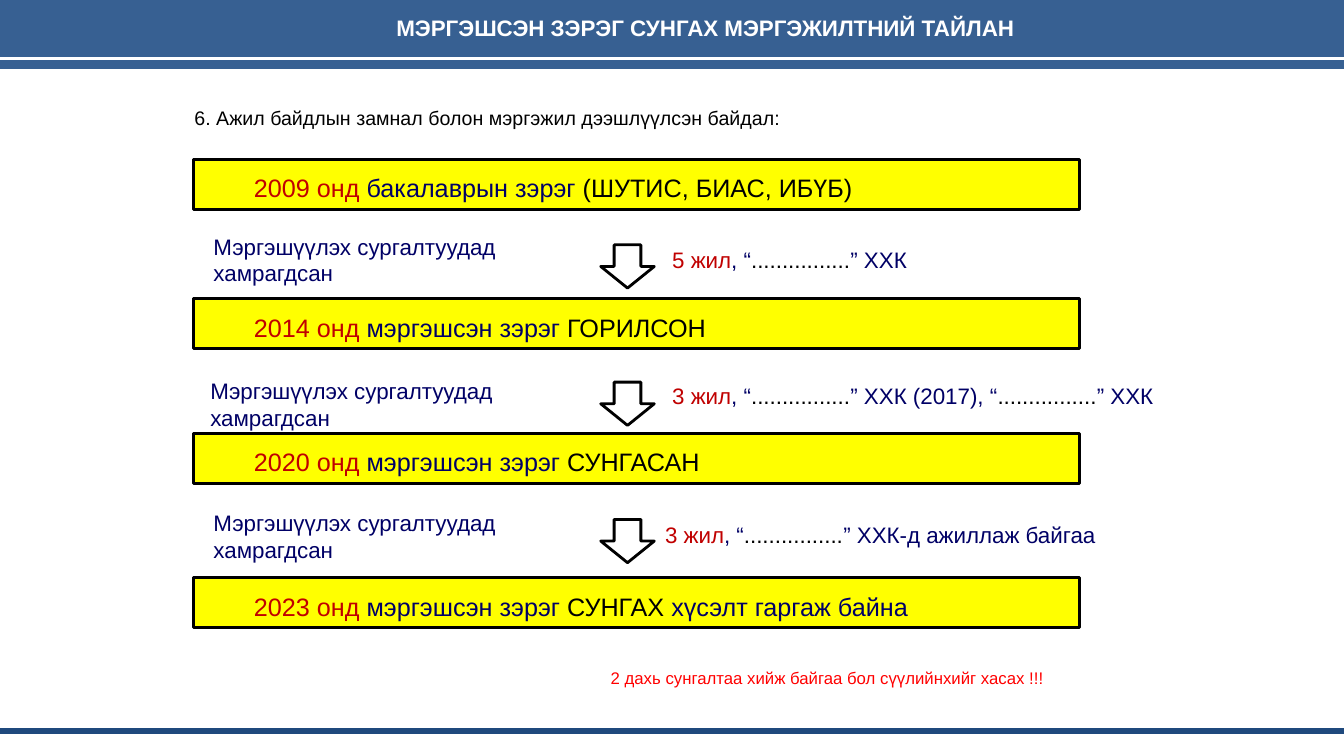
"""Build the slide on the career path behind a specialist grade extension."""
import pptx
import pptx.dml.color
import pptx.enum.shapes
import pptx.enum.text
import pptx.oxml
import pptx.util

Cm = pptx.util.Cm
Pt = pptx.util.Pt
SHAPES = pptx.enum.shapes.MSO_SHAPE
ALIGN = pptx.enum.text.PP_ALIGN

BLACK, WHITE, RED, NAVY = "000000", "FFFFFF", "C00000", "000066"
YELLOW, STEEL, DEEP_BLUE, BRIGHT_RED = "FFFF00", "376092", "1F497D", "FF0000"

TITLE = "МЭРГЭШСЭН ЗЭРЭГ СУНГАХ МЭРГЭЖИЛТНИЙ ТАЙЛАН"
HEADING = "6. Ажил байдлын замнал болон мэргэжил дээшлүүлсэн байдал:"
WARNING = "2 дахь сунгалтаа хийж байгаа бол сүүлийнхийг хасах !!!"
TRAINING = "Мэргэшүүлэх сургалтуудад хамрагдсан"
DOTS = ("................", BLACK)

STAGES = [
    (4.01, [("2009 онд ", RED), ("бакалаврын зэрэг ", NAVY), ("(ШУТИС, БИАС, ИБҮБ)", BLACK)]),
    (7.52, [("2014 онд ", RED), ("мэргэшсэн зэрэг ", NAVY), ("ГОРИЛСОН", BLACK)]),
    (10.92, [("2020 онд ", RED), ("мэргэшсэн зэрэг ", NAVY), ("СУНГАСАН", BLACK)]),
    (14.55, [("2023 онд ", RED), ("мэргэшсэн зэрэг ", NAVY), ("СУНГАХ ", BLACK),
             ("хүсэлт гаргаж байна", NAVY)]),
]
STEPS = [
    {"training": (5.13, 5.74), "work": (16.69, 6.07, 10.52), "wrap": True,
     "runs": [("5 жил", RED), (", “", NAVY), DOTS, ("” ХХК", NAVY)]},
    {"training": (5.05, 9.37), "work": (16.69, 9.5, 12.88), "wrap": False,
     "runs": [("3 жил", RED), (", “", NAVY), DOTS, ("” ХХК (2017), “", NAVY), DOTS,
              ("” ХХК", NAVY)]},
    {"training": (5.13, 12.7), "work": (16.51, 13, 11.56), "wrap": False,
     "runs": [("3 жил", RED), (", “", NAVY), DOTS, ("” ХХК-д ажиллаж байгаа", NAVY)]},
]

SLIDE_WIDTH, SLIDE_HEIGHT = 33.87, 19.05
BAR_LEFT, BAR_WIDTH, BAR_HEIGHT = 4.88, 22.33, 1.27
ARROW_LEFT, ARROW_TOP, ARROW_STEP = 15.14, 6.17, 3.46
ARROW_WIDTH, ARROW_HEIGHT = 1.35, 1.09


def color(value):
    return pptx.dml.color.RGBColor.from_string(value)


def write(frame, runs, size=16, bold=False, align=ALIGN.LEFT, wrap=True):
    frame.word_wrap = wrap
    paragraph = frame.paragraphs[0]
    paragraph.alignment = align
    for text, run_color, *own_size in runs:
        run = paragraph.add_run()
        run.text = text
        run.font.name = "Arial"
        run.font.size = Pt(own_size[0] if own_size else size)
        run.font.bold = bold
        run.font.color.rgb = color(run_color)


def add_text(slide, box, runs, **format):
    shape = slide.shapes.add_textbox(*map(Cm, box))
    write(shape.text_frame, runs, **format)


def add_block(slide, kind, box, fill, line):
    shape = slide.shapes.add_shape(kind, *map(Cm, box))
    shape.shadow.inherit = False
    shape.fill.solid()
    shape.fill.fore_color.rgb = color(fill)
    shape.line.color.rgb = color(line)
    shape.line.width = Pt(2)
    return shape


def add_rule(slide, top, line, width):
    connector = slide.shapes.add_connector(
        pptx.enum.shapes.MSO_CONNECTOR.STRAIGHT, 0, Cm(top), Cm(SLIDE_WIDTH), Cm(top))
    connector.line.color.rgb = color(line)
    connector.line.width = Pt(width)
    properties = connector._element.spPr
    properties.append(pptx.oxml.parse_xml(
        '<a:effectLst xmlns:a="http://schemas.openxmlformats.org/drawingml/2006/main"/>'))


def main():
    presentation = pptx.Presentation()
    presentation.slide_width = Cm(SLIDE_WIDTH)
    presentation.slide_height = Cm(SLIDE_HEIGHT)
    slide = presentation.slides.add_slide(presentation.slide_layouts[6])

    add_block(slide, SHAPES.RECTANGLE, (0, 0, SLIDE_WIDTH, 1.7), STEEL, STEEL)
    add_text(slide, (5.36, 0.23, 24.84, 0.94), [(TITLE, WHITE)], bold=True, align=ALIGN.CENTER)
    add_rule(slide, 18.42, DEEP_BLUE, 4.5)
    add_rule(slide, 1.47, WHITE, 2.25)
    add_text(slide, (4.65, 2.54, 20.75, 0.86), [(HEADING, BLACK)], size=14)

    for top, runs in STAGES:
        bar = add_block(slide, SHAPES.RECTANGLE, (BAR_LEFT, top, BAR_WIDTH, BAR_HEIGHT),
                        YELLOW, BLACK)
        bar.text_frame.vertical_anchor = pptx.enum.text.MSO_ANCHOR.MIDDLE
        write(bar.text_frame, [("\t", RED, 24)] + runs, size=18)

    for index, step in enumerate(STEPS):
        arrow_top = ARROW_TOP + index * ARROW_STEP
        add_block(slide, SHAPES.DOWN_ARROW, (ARROW_LEFT, arrow_top, ARROW_WIDTH, ARROW_HEIGHT),
                  WHITE, BLACK)
        add_text(slide, (*step["training"], 9.91, 1.63), [(TRAINING, NAVY)])
        add_text(slide, (*step["work"], 0.94), step["runs"], wrap=step["wrap"])

    add_text(slide, (15.14, 16.71, 13.23, 0.76), [(WARNING, BRIGHT_RED)], size=12)
    presentation.save("out.pptx")


if __name__ == "__main__":
    main()
